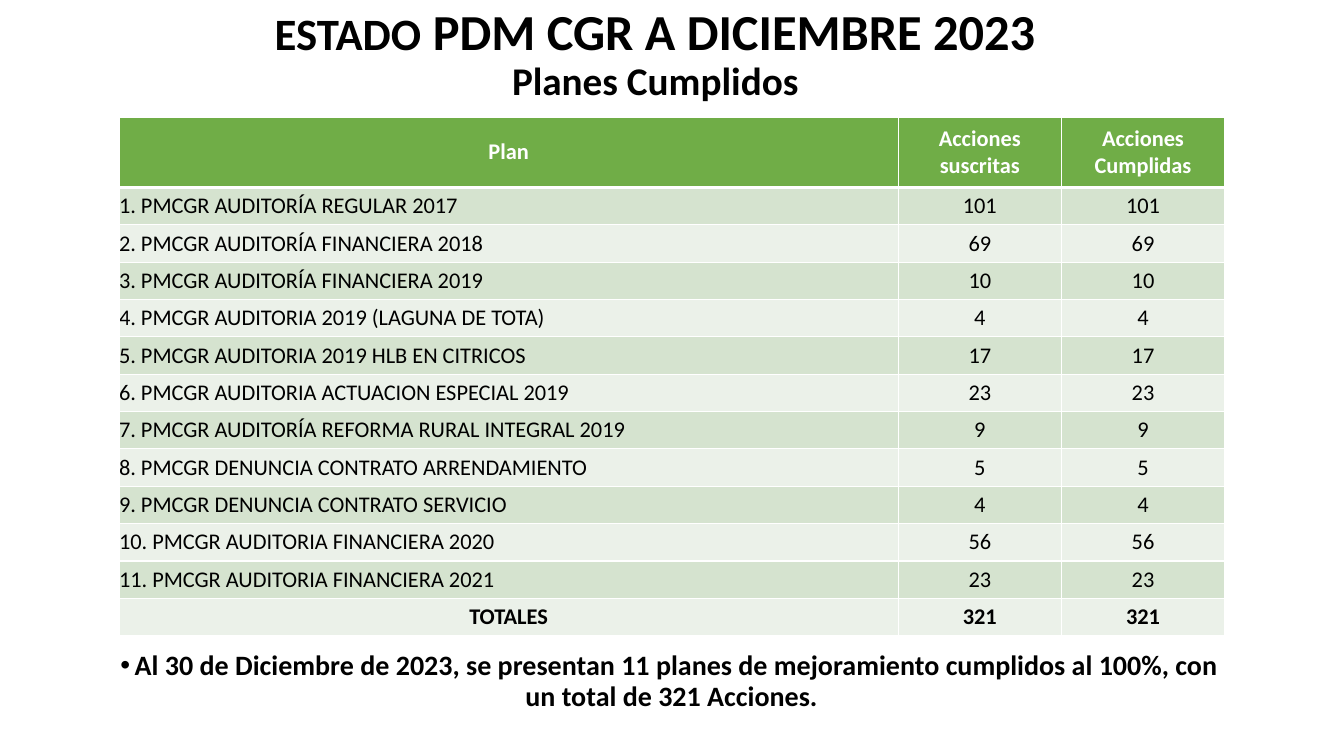
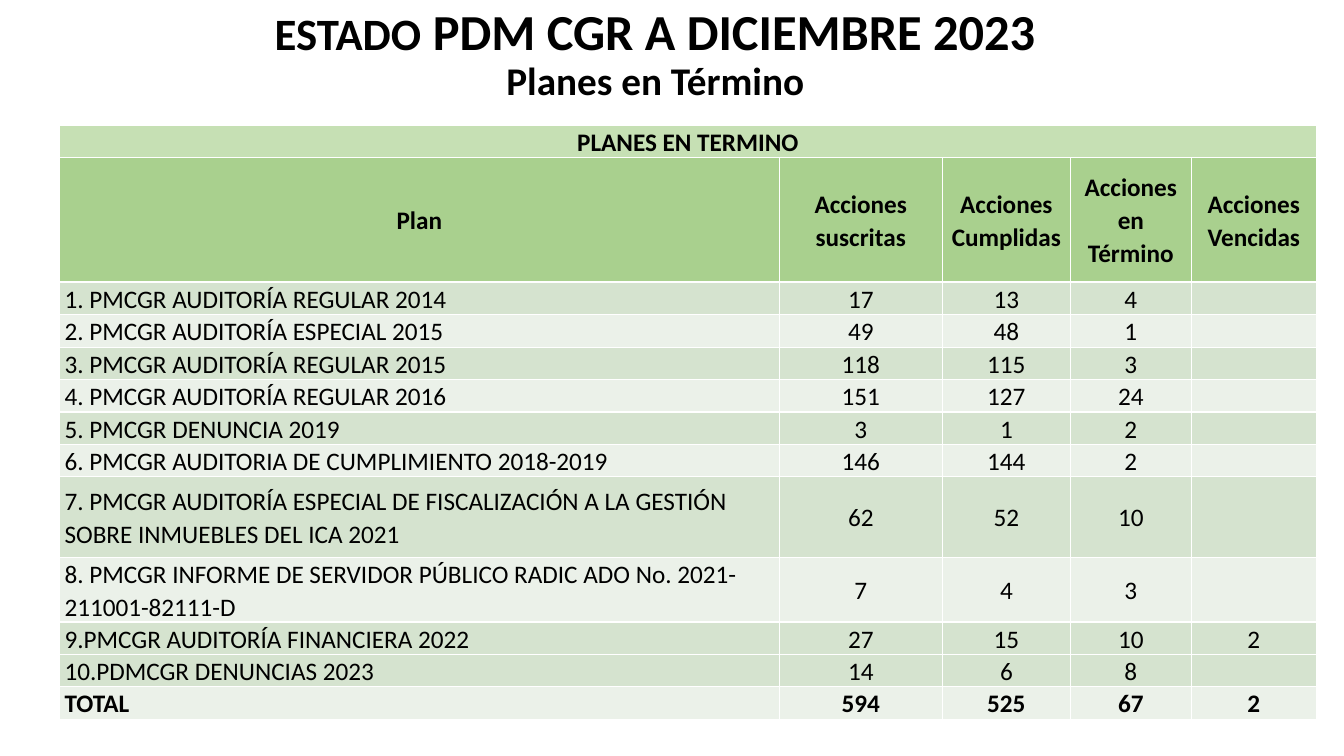
"""Build the two slides on improvement plans: fulfilled plans and plans in progress."""
from lxml.etree import SubElement
from pptx import Presentation
from pptx.dml.color import RGBColor
from pptx.enum.text import MSO_ANCHOR as Anchor, PP_ALIGN as Align
from pptx.oxml.ns import qn
from pptx.util import Pt

FONT = "Calibri"
BLACK = RGBColor(0x00, 0x00, 0x00)
WHITE = RGBColor(0xFF, 0xFF, 0xFF)
HEADER_GREEN = RGBColor(0x70, 0xAD, 0x47)
BANNER_GREEN = RGBColor(0xC6, 0xE0, 0xB4)
SOFT_GREEN = RGBColor(0xA9, 0xD0, 0x8E)
BAND_DARK = RGBColor(0xD5, 0xE3, 0xCF)
BAND_LIGHT = RGBColor(0xEB, 0xF1, 0xE9)

TITLE_RUNS = [("ESTADO", 32), (" PDM CGR A DICIEMBRE 2023", 36)]

FULFILLED = {
    "subtitle": "Planes Cumplidos",
    "header": ("Plan", "Acciones suscritas", "Acciones Cumplidas"),
    "plans": [
        ("1. PMCGR AUDITORÍA REGULAR 2017", 101, 101),
        ("2. PMCGR AUDITORÍA FINANCIERA 2018", 69, 69),
        ("3. PMCGR AUDITORÍA FINANCIERA 2019", 10, 10),
        ("4. PMCGR AUDITORIA 2019 (LAGUNA DE TOTA)", 4, 4),
        ("5. PMCGR AUDITORIA 2019 HLB EN CITRICOS", 17, 17),
        ("6. PMCGR AUDITORIA ACTUACION ESPECIAL 2019", 23, 23),
        ("7. PMCGR AUDITORÍA REFORMA RURAL INTEGRAL 2019", 9, 9),
        ("8. PMCGR DENUNCIA CONTRATO ARRENDAMIENTO", 5, 5),
        ("9. PMCGR DENUNCIA CONTRATO SERVICIO", 4, 4),
        ("10. PMCGR AUDITORIA FINANCIERA 2020", 56, 56),
        ("11. PMCGR AUDITORIA FINANCIERA 2021", 23, 23),
    ],
    "total": ("TOTALES", 321, 321),
    "total_align": Align.CENTER,
    "origin": (85, 83.5),
    "widths": (556.6, 116.6, 116.6),
    "header_height": 50.4,
    "row_height": 26.7,
    "header_fill": HEADER_GREEN,
    "header_color": WHITE,
    "header_rule": 3,
    "size": 16,
    "side_margin": 0,
    "line_spacing": 1,
    "space_after": 0,
}

IN_PROGRESS = {
    "subtitle": "Planes en Término",
    "banner": "PLANES EN TERMINO",
    "header": ("Plan", "Acciones suscritas", "Acciones Cumplidas",
               "Acciones en Término", "Acciones Vencidas"),
    "plans": [
        ("1. PMCGR AUDITORÍA REGULAR 2014", 17, 13, 4, ""),
        ("2. PMCGR AUDITORÍA ESPECIAL 2015", 49, 48, 1, ""),
        ("3. PMCGR AUDITORÍA REGULAR 2015", 118, 115, 3, ""),
        ("4. PMCGR AUDITORÍA REGULAR 2016", 151, 127, 24, ""),
        ("5. PMCGR DENUNCIA 2019", 3, 1, 2, ""),
        ("6. PMCGR AUDITORIA DE CUMPLIMIENTO 2018-2019", 146, 144, 2, ""),
        ("7. PMCGR AUDITORÍA ESPECIAL DE FISCALIZACIÓN A LA GESTIÓN "
         "SOBRE INMUEBLES DEL ICA 2021", 62, 52, 10, ""),
        ("8. PMCGR INFORME DE SERVIDOR PÚBLICO RADIC ADO No. "
         "2021-211001-82111-D", 7, 4, 3, ""),
        ("9.PMCGR AUDITORÍA FINANCIERA 2022", 27, 15, 10, 2),
        ("10.PDMCGR DENUNCIAS 2023", 14, 6, 8, ""),
    ],
    "total": ("TOTAL", 594, 525, 67, 2),
    "total_align": Align.LEFT,
    "origin": (42.5, 89.3),
    "widths": (514.1, 116.6, 91.4, 86.4, 89.3),
    "header_height": 89.3,
    "row_height": 21.6,
    "tall_rows": {6: 57.6, 7: 43.9},
    "dark_rows": {9},
    "header_fill": SOFT_GREEN,
    "header_color": BLACK,
    "header_rule": 1.5,
    "size": 18,
    "side_margin": 3.6,
    "line_spacing": 1.07,
    "space_after": 8,
}

CONCLUSION = ("Al 30 de Diciembre de 2023, se presentan 11 planes de mejoramiento "
              "cumplidos al 100%, con un total de 321 Acciones.")


def write(frame, lines, size=18, color=BLACK, bold=True, align=Align.CENTER,
          line_spacing=0.9, space_after=0, bullet=None):
    """Write lines of (text, size) runs, or one plain string, as one paragraph."""
    if isinstance(lines, str):
        lines = [[(lines, size)]]
    paragraph = frame.paragraphs[0]
    paragraph.alignment = align
    paragraph.line_spacing = line_spacing
    paragraph.space_after = Pt(space_after)
    if bullet:
        properties = paragraph._p.get_or_add_pPr()
        properties.set("marL", "0")
        properties.set("indent", str(-Pt(18)))
        SubElement(properties, qn("a:buFont"), typeface="Arial")
        SubElement(properties, qn("a:buChar"), char=bullet)
    for index, line in enumerate(lines):
        if index:
            paragraph.add_line_break()
        for text, run_size in line:
            run = paragraph.add_run()
            run.text = text
            run.font.name = FONT
            run.font.size = Pt(run_size)
            run.font.bold = bold
            run.font.color.rgb = color


def add_text(slide, box, lines, **text_format):
    """Place a wrapped, vertically centred text box."""
    frame = slide.shapes.add_textbox(*map(Pt, box)).text_frame
    frame.word_wrap = True
    frame.vertical_anchor = Anchor.MIDDLE
    write(frame, lines, **text_format)


def set_borders(cell, top, bottom):
    """Draw white cell borders, one point wide at the sides."""
    properties = cell._tc.get_or_add_tcPr()
    for side, width in (("L", 1), ("R", 1), ("T", top), ("B", bottom)):
        line = SubElement(properties, qn(f"a:ln{side}"), w=str(Pt(width)))
        fill = SubElement(line, qn("a:solidFill"))
        SubElement(fill, qn("a:srgbClr"), val=str(WHITE))


def table_rows(plan_set):
    """List each row as values, height, fill, bottom rule and text format."""
    height = plan_set["row_height"]
    columns = len(plan_set["widths"])
    rows = []
    if "banner" in plan_set:
        banner = (plan_set["banner"],) + ("",) * (columns - 1)
        rows.append((banner, height, BANNER_GREEN, 1, {}))
    rows.append((plan_set["header"], plan_set["header_height"], plan_set["header_fill"],
                 plan_set["header_rule"], {"color": plan_set["header_color"]}))
    for index, plan in enumerate(plan_set["plans"]):
        dark = index % 2 == 0 or index in plan_set.get("dark_rows", ())
        rows.append((plan, plan_set.get("tall_rows", {}).get(index, height),
                     BAND_DARK if dark else BAND_LIGHT, 1,
                     {"bold": False, "name_align": Align.LEFT}))
    rows.append((plan_set["total"], height, BAND_LIGHT, 1,
                 {"name_align": plan_set["total_align"]}))
    return rows


def add_plan_table(slide, plan_set):
    """Add the table of plans with its header, bands and total."""
    rows, widths = table_rows(plan_set), plan_set["widths"]
    box = (*plan_set["origin"], sum(widths), sum(row[1] for row in rows))
    table = slide.shapes.add_table(len(rows), len(widths), *map(Pt, box)).table
    table.horz_banding = False
    for column, width in zip(table.columns, widths):
        column.width = Pt(width)
    rule_above = 1
    for row_index, (values, height, fill, rule_below, row_format) in enumerate(rows):
        table.rows[row_index].height = Pt(height)
        text_format = dict(row_format)
        name_align = text_format.pop("name_align", Align.CENTER)
        for column_index, value in enumerate(values):
            cell = table.cell(row_index, column_index)
            set_borders(cell, rule_above, rule_below)
            cell.fill.solid()
            cell.fill.fore_color.rgb = fill
            cell.margin_left = cell.margin_right = Pt(plan_set["side_margin"])
            cell.margin_top = cell.margin_bottom = Pt(0)
            cell.vertical_anchor = Anchor.MIDDLE
            if value != "":
                write(cell.text_frame, str(value), size=plan_set["size"],
                      align=Align.CENTER if column_index else name_align,
                      line_spacing=plan_set["line_spacing"],
                      space_after=plan_set["space_after"], **text_format)
        rule_above = rule_below
    if "banner" in plan_set:
        table.cell(0, 0).merge(table.cell(0, len(widths) - 1))
        table.cell(0, 0).vertical_anchor = Anchor.BOTTOM


def add_plan_slide(deck, plan_set):
    """Add a slide with the shared title and a table of plans."""
    slide = deck.slides.add_slide(deck.slide_layouts[6])
    add_text(slide, (-16, 9.4, 968, 61), [TITLE_RUNS, [(plan_set["subtitle"], 28)]])
    add_plan_table(slide, plan_set)
    return slide


def main():
    """Build and save the deck."""
    deck = Presentation()
    deck.slide_width, deck.slide_height = Pt(960), Pt(540)
    fulfilled_slide = add_plan_slide(deck, FULFILLED)
    add_text(fulfilled_slide, (79, 456.5, 801.4, 61.2), CONCLUSION,
             size=20, space_after=6, bullet="•")
    add_plan_slide(deck, IN_PROGRESS)
    deck.save("out.pptx")


if __name__ == "__main__":
    main()
